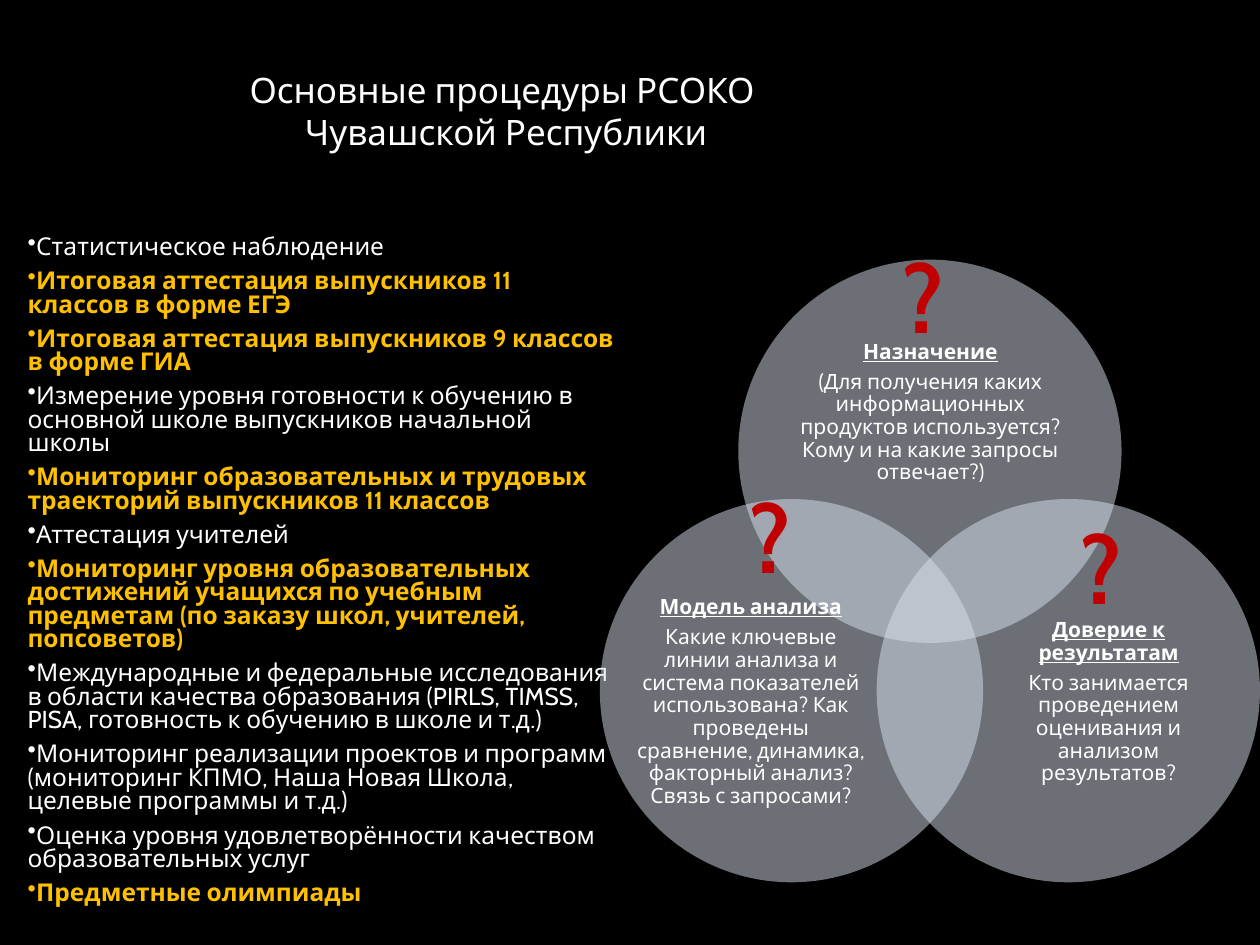
from lxml import etree
from pptx import Presentation
from pptx.dml.color import RGBColor
from pptx.enum import shapes, text
from pptx.oxml import ns
from pptx.util import Pt

FONT = "Cabin"
COLORS = {"bg": "000000", "text": "FFFFFF", "accent": "FFC000",
          "circle": "D8E1EC", "question": "C00000"}


def add_run(p, words, size, color="text", bold=False, underline=False):
    r = p.add_run()
    r.text = words
    r.font.name = FONT
    r.font.size = Pt(size)
    r.font.bold = bold
    r.font.underline = underline
    r.font.color.rgb = RGBColor.from_string(COLORS[color])


def add_box(x, y, w, h, anchor=text.MSO_ANCHOR.TOP, wrap=True):
    tf = s.shapes.add_textbox(Pt(x), Pt(y), Pt(w), Pt(h)).text_frame
    tf.word_wrap = wrap
    tf.vertical_anchor = anchor
    return tf


prs = Presentation()
prs.slide_width, prs.slide_height = Pt(720), Pt(540)
s = prs.slides.add_slide(prs.slide_layouts[6])
s.background.fill.solid()
s.background.fill.fore_color.rgb = RGBColor.from_string(COLORS["bg"])

# Procedure list: (wording, highlighted)
procedures = [
    ("Статистическое наблюдение", False),
    ("Итоговая аттестация выпускников 11 классов в форме ЕГЭ", True),
    ("Итоговая аттестация выпускников 9 классов в форме ГИА", True),
    ("Измерение уровня готовности к обучению в основной школе выпускников "
     "начальной школы", False),
    ("Мониторинг образовательных и трудовых траекторий выпускников "
     "11 классов", True),
    ("Аттестация учителей", False),
    ("Мониторинг уровня образовательных достижений учащихся по учебным "
     "предметам (по заказу школ, учителей, попсоветов)", True),
    ("Международные и федеральные исследования в области качества образования "
     "(PIRLS, TIMSS, PISA, готовность к обучению в школе и т.д.)", False),
    ("Мониторинг реализации проектов и программ (мониторинг КПМО, "
     "Наша Новая Школа, целевые программы и т.д.)", False),
    ("Оценка уровня удовлетворённости качеством образовательных услуг", False),
    ("Предметные олимпиады", True),
]
tf = add_box(8.64, 131.76, 351.36, 396)
for i, (words, key) in enumerate(procedures):
    p = tf.paragraphs[0] if i == 0 else tf.add_paragraph()
    p.line_spacing = 0.8
    p.space_before = Pt(6 if i else 0)
    pPr = p._p.get_or_add_pPr()
    pPr.set("marL", "0")
    pPr.set("indent", "0")
    etree.SubElement(pPr, ns.qn("a:buChar")).set("char", "•")
    add_run(p, words, 14, "accent" if key else "text", bold=key)

# Title
p = add_box(127.5, 21, 323.3, 84, text.MSO_ANCHOR.MIDDLE).paragraphs[0]
p.alignment = text.PP_ALIGN.CENTER
add_run(p, "Основные процедуры РСОКО ", 20)
p.add_line_break()
add_run(p, "Чувашской Республики", 20)

# Venn diagram: circle corner, text area, heading, question
DIAMETER = 219
venn = [
    ((421.9, 148.4), (451.4, 186.5, 160.6, 98.6), "Назначение",
     "(Для получения каких информационных продуктов используется? "
     "Кому и на какие запросы отвечает?)"),
    ((501, 285.2), (568, 341.3, 131, 120.2), "Доверие к результатам",
     "Кто занимается проведением оценивания и анализом результатов?"),
    ((342.8, 285.2), (363.6, 341.3, 131, 120.2), "Модель анализа",
     "Какие ключевые линии анализа и система показателей использована? "
     "Как проведены сравнение, динамика, факторный анализ? "
     "Связь с запросами?"),
]
for (x, y), area, heading, question in venn:
    sp = s.shapes.add_shape(shapes.MSO_SHAPE.OVAL, Pt(x), Pt(y),
                            Pt(DIAMETER), Pt(DIAMETER))
    sp.shadow.inherit = False
    sp.line.fill.background()
    sp.fill.solid()
    sp.fill.fore_color.rgb = RGBColor.from_string(COLORS["circle"])
    clr = sp._element.spPr.find(".//" + ns.qn("a:srgbClr"))
    etree.SubElement(clr, ns.qn("a:alpha")).set("val", "50000")

    tf = add_box(*area, anchor=text.MSO_ANCHOR.MIDDLE)
    tf.margin_left = tf.margin_right = tf.margin_top = tf.margin_bottom = 0
    for p, words, is_head in ((tf.paragraphs[0], heading, True),
                              (tf.add_paragraph(), question, False)):
        p.alignment = text.PP_ALIGN.CENTER
        p.line_spacing = 0.9
        p.space_after = Pt(4.2)
        add_run(p, words, 12, bold=is_head, underline=is_head)

# Question marks
for x, y in ((606.2, 288), (416.9, 270), (504, 133.2)):
    p = add_box(x, y, 46.8, 72.7, wrap=False).paragraphs[0]
    p.alignment = text.PP_ALIGN.CENTER
    add_run(p, "?", 54, "question", bold=True)

prs.save("out.pptx")
